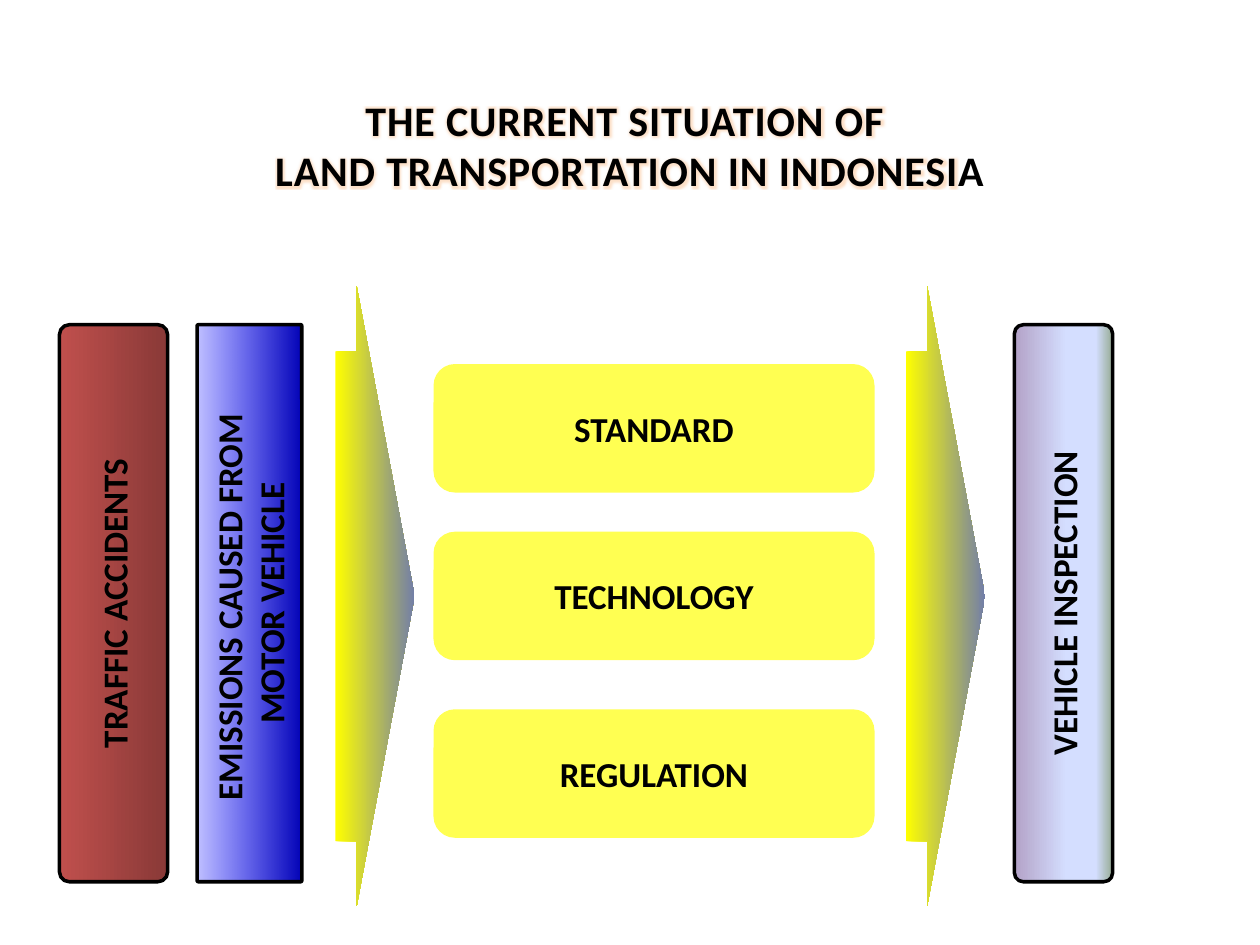
from lxml import etree
from pptx import Presentation
from pptx.dml.color import RGBColor
from pptx.enum.shapes import MSO_SHAPE
from pptx.enum.text import MSO_ANCHOR, MSO_AUTO_SIZE, PP_ALIGN
from pptx.oxml import parse_xml
from pptx.oxml.ns import nsdecls, qn
from pptx.util import Cm, Pt

ARROW = MSO_SHAPE.RIGHT_ARROW
ROUNDED = MSO_SHAPE.ROUNDED_RECTANGLE
TOP = MSO_ANCHOR.TOP
MIDDLE = MSO_ANCHOR.MIDDLE
FIT_SHAPE = MSO_AUTO_SIZE.SHAPE_TO_FIT_TEXT
CENTER = PP_ALIGN.CENTER


def set_gradient(shape, stops, angle):
    """Fill with (position %, colour, opacity %) stops; angle is clockwise."""
    shape.fill.gradient()
    shape.fill.gradient_angle = (360 - angle) % 360
    stop_list = next(shape._element.spPr.iter(qn("a:gsLst")))
    for stop in list(stop_list):
        stop_list.remove(stop)
    for position, color, opacity in stops:
        stop = etree.SubElement(stop_list, qn("a:gs"), pos=str(position * 1000))
        value = etree.SubElement(stop, qn("a:srgbClr"), val=color)
        if opacity < 100:
            etree.SubElement(value, qn("a:alpha"), val=str(opacity * 1000))


def write_text(shape, text, size, anchor=MIDDLE, wrap=False):
    frame = shape.text_frame
    frame.text = text
    frame.vertical_anchor = anchor
    frame.word_wrap = wrap
    for paragraph in frame.paragraphs:
        paragraph.alignment = CENTER
        for run in paragraph.runs:
            run.font.name = "Calibri"
            run.font.size = Pt(size)
            run.font.bold = True
            run.font.color.rgb = RGBColor.from_string("000000")


presentation = Presentation()
presentation.slide_width = Cm(25.4)
presentation.slide_height = Cm(19.05)
slide = presentation.slides.add_slide(presentation.slide_layouts[6])
shapes = slide.shapes

# Arrows between the three columns
for left in (6.76, 18.26):
    arrow = shapes.add_shape(ARROW, Cm(left), Cm(5.77), Cm(1.6), Cm(12.5))
    arrow.adjustments[0] = 0.79
    arrow.adjustments[1] = 0.73
    arrow.shadow.inherit = False
    arrow.line.fill.background()
    set_gradient(arrow, [(0, "FFFF00", 100), (100, "727EA8", 100)], 0)

# Yellow boxes in the middle
for text, top in (("STANDARD", 7.34), ("TECHNOLOGY", 10.72), ("REGULATION", 14.3)):
    box = shapes.add_shape(ROUNDED, Cm(8.74), Cm(top), Cm(8.89), Cm(2.59))
    box.shadow.inherit = False
    box.line.fill.background()
    box.fill.solid()
    box.fill.fore_color.rgb = RGBColor.from_string("FFFF00")
    color = next(box._element.spPr.iter(qn("a:srgbClr")))
    etree.SubElement(color, qn("a:alpha"), val="68000")
    write_text(box, text, 20)

# Upright bars: text, centre, thickness, corner, gradient stops
bars = [
    ("TRAFFIC ACCIDENTS", 2.29, 2.18, 0.09,
     [(0, "C0504D", 100), (100, "893937", 100)]),
    ("EMISSIONS CAUSED FROM \nMOTOR VEHICLE", 5.03, 2.11, 0.01,
     [(0, "0000FF", 25), (100, "0000B6", 100)]),
    ("VEHICLE INSPECTION", 21.44, 1.98, 0.09,
     [(0, "B3A2C7", 100), (53, "D4DEFF", 100), (83, "D4DEFF", 100), (100, "96AB94", 100)]),
]
bar_length, bar_middle = 11.23, 12.16
for text, center, thickness, corner, stops in bars:
    bar = shapes.add_shape(ROUNDED, Cm(center - bar_length / 2), Cm(bar_middle - thickness / 2),
                           Cm(bar_length), Cm(thickness))
    bar.rotation = 270
    bar.adjustments[0] = corner
    bar.shadow.inherit = False
    bar.line.color.rgb = RGBColor.from_string("000000")
    bar.line.width = Pt(2)
    set_gradient(bar, stops, 90)
    write_text(bar, text, 20)

# Title with a thin outline and a soft glow
title = shapes.add_textbox(Cm(0), Cm(1.78), Cm(25.4), Cm(2.31))
write_text(title, "THE CURRENT SITUATION OF \nLAND TRANSPORTATION IN INDONESIA", 24, TOP, True)
title.text_frame.auto_size = FIT_SHAPE
for paragraph in title.text_frame.paragraphs:
    for run in paragraph.runs:
        properties = run._r.get_or_add_rPr()
        properties.set("spc", "50")
        properties.insert(0, parse_xml(
            f'<a:ln {nsdecls("a")} w="12700"><a:solidFill><a:srgbClr val="E78738"/>'
            '</a:solidFill></a:ln>'))
        properties.find(qn("a:solidFill")).addnext(parse_xml(
            f'<a:effectLst {nsdecls("a")}><a:glow rad="53100"><a:srgbClr val="F79646">'
            '<a:alpha val="30000"/></a:srgbClr></a:glow></a:effectLst>'))

presentation.save("out.pptx")
